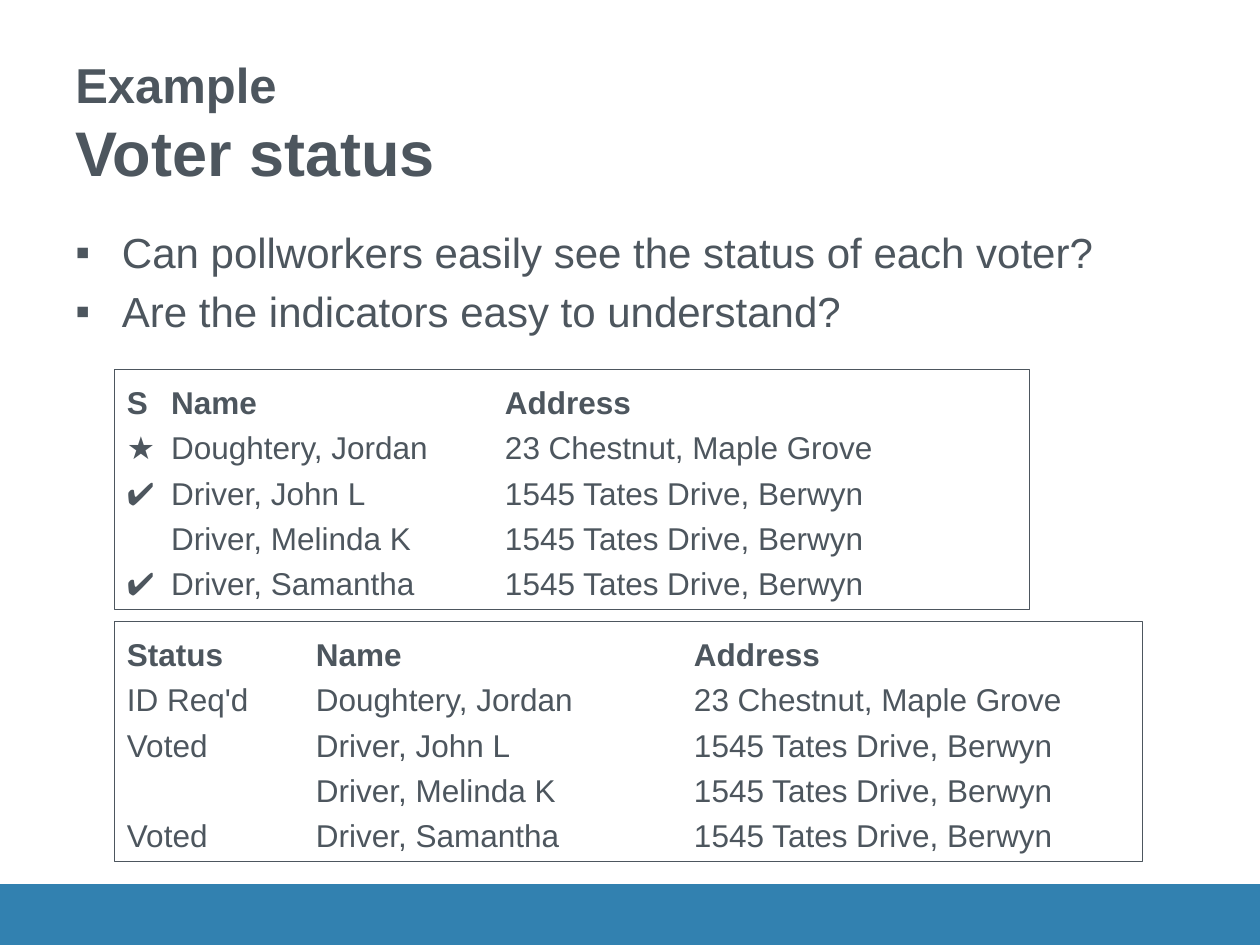
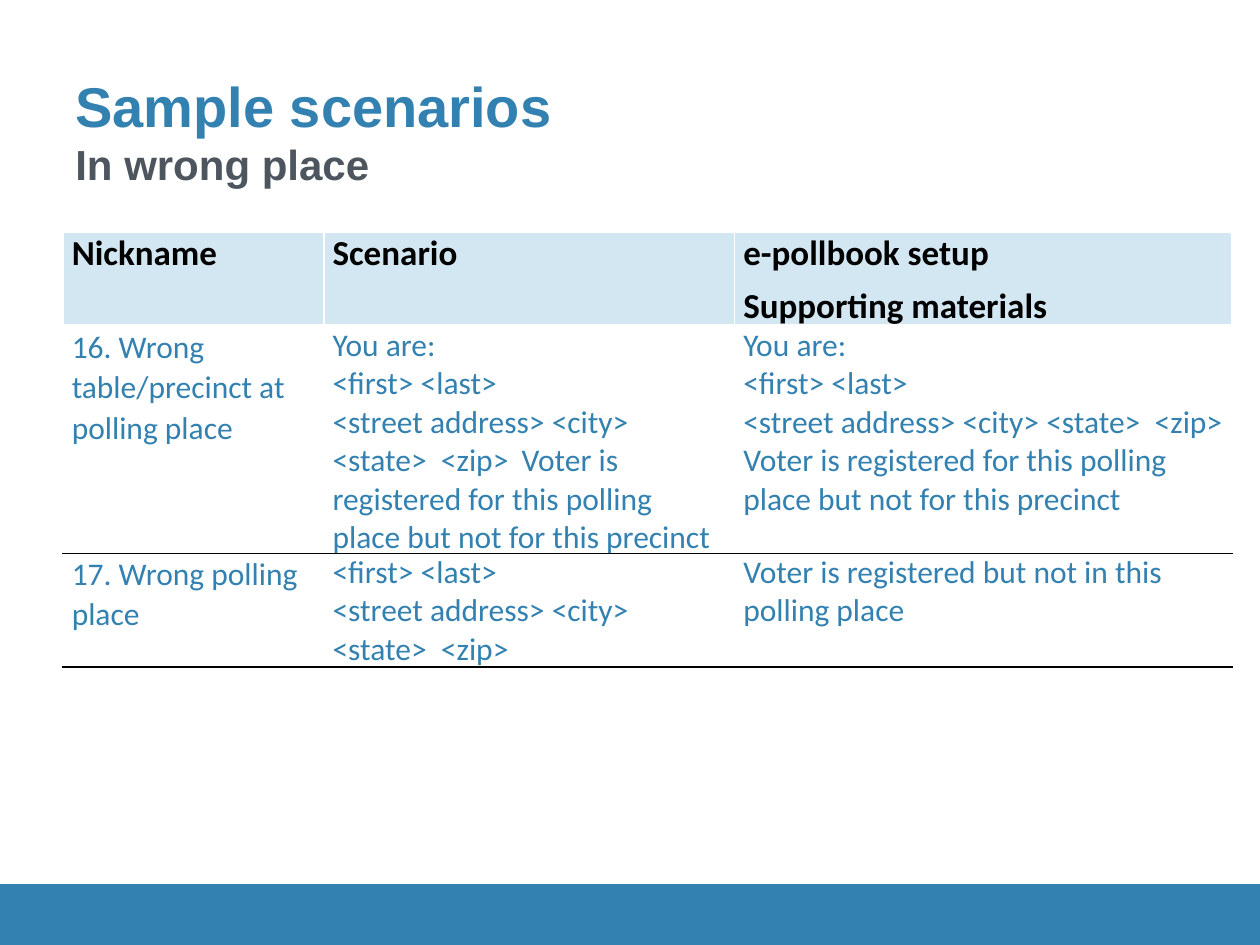
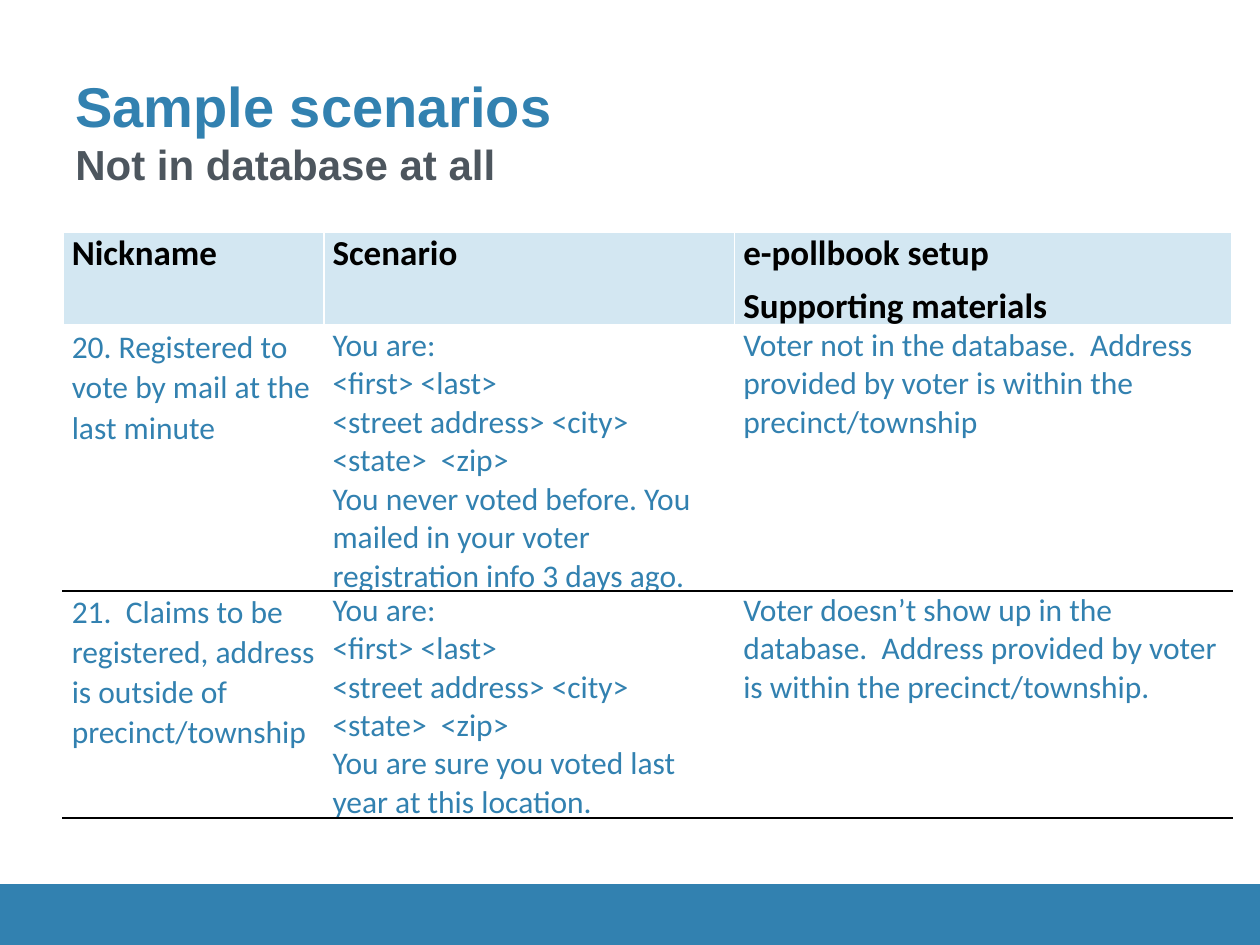
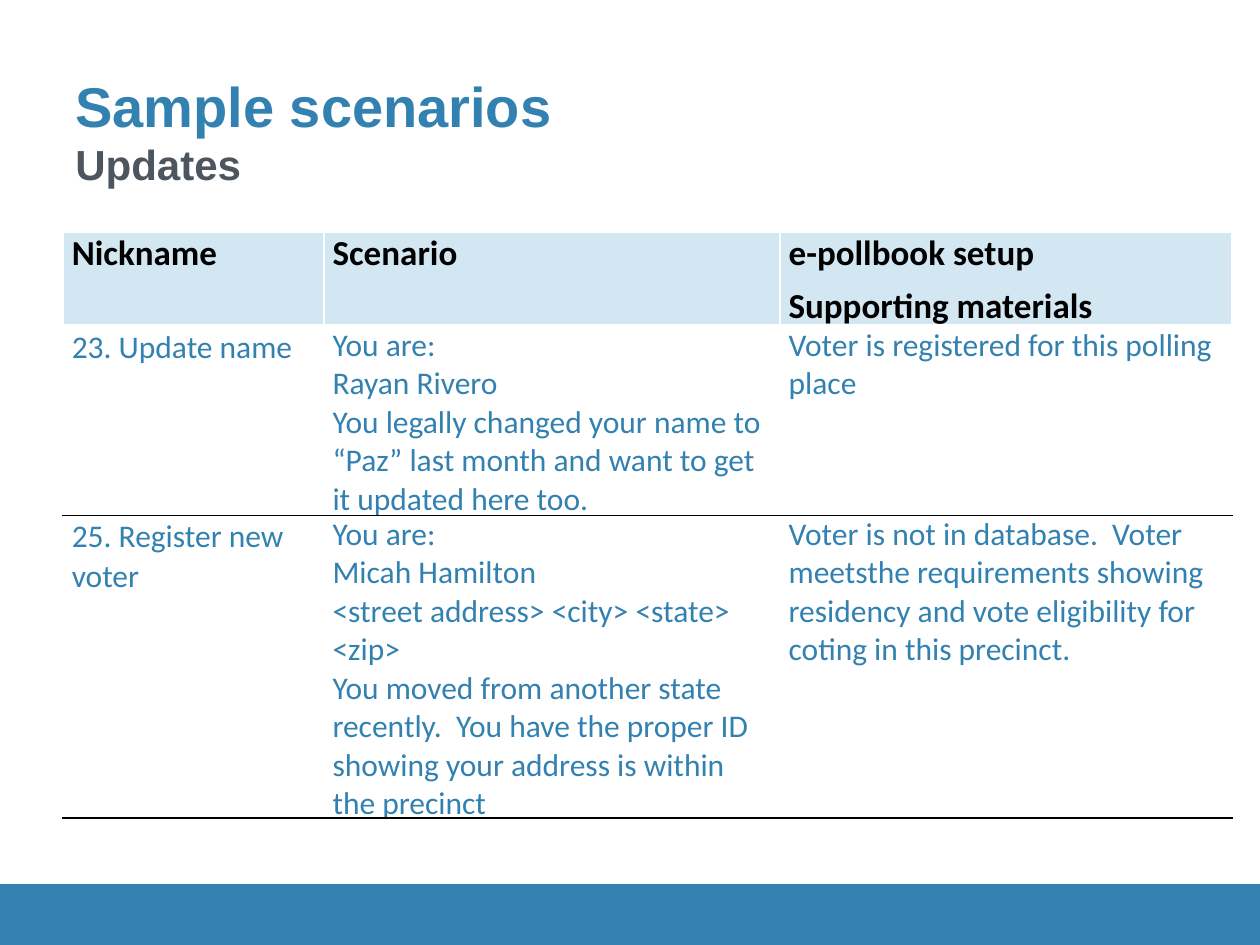
from lxml import etree
from pptx import Presentation
from pptx.dml import color
from pptx.enum import shapes, text
from pptx.oxml import ns
from pptx import util as u

WIDTH, HEIGHT = u.Inches(10), u.Inches(7.5)
COLUMN, ROW = WIDTH / 100, HEIGHT / 75

BLUE, SLATE, PALE = "3281B0", "4D565E", "D3E7F2"
WHITE, BLACK = "FFFFFF", "000000"

TITLE_AREA = (5, 3, 90, 12.5)
BAND_AREA = (0, 70.2, 100, 5)
BODY_AREA = (5, 17.5, 90, 8)
TABLE_LEFT, TABLE_TOP = 5, 18.4
ROW_HEIGHTS = (5.6, 7.6, 7.1)
WIDE_SETUP = (20.7, 32.6, 39.5)
WIDE_SCENARIO = (20.7, 36.2, 35.9)

HEADER_FONT = {"name": "Calibri", "size": u.Pt(20), "bold": True}
CELL_FONT = {"name": "Calibri", "size": u.Pt(18), "bold": False}
BODY_FONT = {"name": "Arial", "size": u.Pt(24), "bold": False}
LIST_FONT = {"name": "Arial", "size": u.Pt(18), "bold": False}
LIST_HEADER_FONT = {**LIST_FONT, "bold": True}

HEADER_SPACING = {"space_before": u.Pt(3), "space_after": u.Pt(3)}
NICKNAME_SPACING = {**HEADER_SPACING, "line_spacing": 1.05}
CELL_SPACING = {"space_before": u.Pt(0), "space_after": u.Pt(0)}
LIST_SPACING = {"line_spacing": 1.2, "alignment": text.PP_ALIGN.LEFT}
BODY_SPACING = {"space_before": u.Pt(4.8)}
CELL_FRAME = {
    "margin_left": u.Inches(0.07),
    "margin_right": u.Inches(0.07),
    "margin_top": 0,
    "margin_bottom": 0,
}

HEADERS = ["Nickname", "Scenario", "e-pollbook setup\nSupporting materials"]
PERSON = "<first> <last>\n<street address> <city> <state>  <zip>"
WRONG_PRECINCT = (
    f"You are:\n{PERSON}\tVoter is registered for this polling place "
    "but not for this precinct"
)

SCENARIOS = [
    ("In wrong place", WIDE_SETUP, 34.5, [
        ["16. Wrong table/precinct at polling place", WRONG_PRECINCT, WRONG_PRECINCT],
        ["17. Wrong polling place", PERSON,
         "Voter is registered but not in this polling place"],
    ]),
    ("Not in database at all", WIDE_SETUP, 46.5, [
        ["20. Registered to vote by mail at the last minute",
         f"You are:\n{PERSON}\nYou never voted before. You mailed in your voter "
         "registration info 3 days ago.",
         "Voter not in the database.  Address provided by voter is within the "
         "precinct/township"],
        ["21.  Claims to be registered, address is outside of precinct/township",
         f"You are:\n{PERSON}\nYou are sure you voted last year at this location.",
         "Voter doesn’t show up in the database.  Address provided by voter is "
         "within the precinct/township."],
    ]),
    ("Updates", WIDE_SCENARIO, 46.5, [
        ["23. Update name",
         "You are:\nRayan Rivero\nYou legally changed your name to “Paz” last "
         "month and want to get it updated here too.",
         "Voter is registered for this polling place"],
        ["25. Register new voter",
         "You are:\nMicah Hamilton\n<street address> <city> <state>  <zip>\n"
         "You moved from another state recently.  You have the proper ID showing "
         "your address is within the precinct",
         "Voter is not in database.  Voter meetsthe requirements showing residency "
         "and vote eligibility for coting in this precinct."],
    ]),
]

VOTERS = [
    ("Doughtery, Jordan", "23 Chestnut, Maple Grove"),
    ("Driver, John L", "1545 Tates Drive, Berwyn"),
    ("Driver, Melinda K", "1545 Tates Drive, Berwyn"),
    ("Driver, Samantha", "1545 Tates Drive, Berwyn"),
]
VOTER_LISTS = [
    ((9.1, 29.3, 72.6, 19.1), "S", ["★", "✔", "", "✔"], (0.35, 3)),
    ((9.1, 49.3, 81.6, 19.1), "Status", ["ID Req'd", "Voted", "", "Voted"], (1.5, 4.5)),
]


def rgb(value):
    return color.RGBColor.from_string(value)


def apply(target, values):
    for name, value in values.items():
        setattr(target, name, value)


def grid(left, top, width, height):
    return (round(left * COLUMN), round(top * ROW),
            round(width * COLUMN), round(height * ROW))


def add_run(paragraph, content, font, hue):
    run = paragraph.add_run()
    run.text = content
    apply(run.font, font)
    run.font.color.rgb = rgb(hue)


def add_paragraph(frame, index, content, font, hue, spacing):
    paragraph = frame.paragraphs[0] if index == 0 else frame.add_paragraph()
    apply(paragraph, spacing)
    add_run(paragraph, content, font, hue)
    return paragraph


def add_text_box(slide, area, anchor):
    frame = slide.shapes.add_textbox(*grid(*area)).text_frame
    apply(frame, {"word_wrap": True, "vertical_anchor": anchor})
    return frame


def add_rectangle(slide, area, line_hue, fill_hue=None):
    shape = slide.shapes.add_shape(shapes.MSO_SHAPE.RECTANGLE, *grid(*area))
    shape.shadow.inherit = False
    if fill_hue:
        shape.fill.solid()
        shape.fill.fore_color.rgb = rgb(fill_hue)
    else:
        shape.fill.background()
    shape.line.color.rgb = rgb(line_hue)
    shape.line.width = u.Pt(0.75)
    return shape


def add_title(slide, *lines):
    frame = add_text_box(slide, TITLE_AREA, text.MSO_ANCHOR.BOTTOM)
    paragraph = frame.paragraphs[0]
    for index, (content, size, hue) in enumerate(lines):
        if index:
            paragraph.add_line_break()
        add_run(paragraph, content,
                {"name": "Arial", "size": u.Pt(size), "bold": True}, hue)


def add_slide(presentation, *title_lines):
    slide = presentation.slides.add_slide(presentation.slide_layouts[6])
    add_rectangle(slide, BAND_AREA, BLUE, BLUE)
    add_title(slide, *title_lines)
    return slide


def add_bullets(slide, questions):
    frame = add_text_box(slide, BODY_AREA, text.MSO_ANCHOR.TOP)
    indent = u.Inches(0.37)
    for index, question in enumerate(questions):
        paragraph = add_paragraph(frame, index, question, BODY_FONT, SLATE, BODY_SPACING)
        properties = paragraph._p.get_or_add_pPr()
        properties.set("marL", str(indent))
        properties.set("indent", str(-indent))
        etree.SubElement(properties, ns.qn("a:buFont"), typeface="Arial")
        etree.SubElement(properties, ns.qn("a:buChar"), char="▪")


def set_tab_stops(paragraph, stops):
    tab_list = etree.SubElement(paragraph._p.get_or_add_pPr(), ns.qn("a:tabLst"))
    for stop in stops:
        etree.SubElement(tab_list, ns.qn("a:tab"), pos=str(u.Inches(stop)), algn="l")


def add_voter_list(slide, area, status_label, statuses, stops):
    frame = add_rectangle(slide, area, SLATE).text_frame
    apply(frame, {"word_wrap": True, "vertical_anchor": text.MSO_ANCHOR.TOP})
    rows = [(status_label, "Name", "Address")]
    rows += [(status, *voter) for status, voter in zip(statuses, VOTERS)]
    for index, row in enumerate(rows):
        font = LIST_FONT if index else LIST_HEADER_FONT
        paragraph = add_paragraph(frame, index, "\t".join(row), font, SLATE, LIST_SPACING)
        set_tab_stops(paragraph, stops)


def set_borders(cell, top, bottom, bottom_width):
    properties = cell._tc.get_or_add_tcPr()
    sides = [("lnL", WHITE, 1), ("lnR", WHITE, 1),
             ("lnT", top, 1), ("lnB", bottom, bottom_width)]
    for index, (side, hue, width) in enumerate(sides):
        line = etree.Element(ns.qn(f"a:{side}"), w=str(u.Pt(width)))
        fill = etree.SubElement(line, ns.qn("a:solidFill"))
        etree.SubElement(fill, ns.qn("a:srgbClr"), val=hue)
        properties.insert(index, line)


def fill_cell(cell, content, fill_hue, font, hue, spacing):
    apply(cell, CELL_FRAME)
    cell.fill.solid()
    cell.fill.fore_color.rgb = rgb(fill_hue)
    for index, line in enumerate(content.split("\n")):
        add_paragraph(cell.text_frame, index, line, font, hue, spacing)


def add_scenario_table(slide, widths, height, scenarios):
    rows = [HEADERS, *scenarios]
    area = grid(TABLE_LEFT, TABLE_TOP, sum(widths), height)
    graphic = slide.shapes.add_table(len(rows), len(widths), *area)
    table = graphic.table
    for column, width in zip(table.columns, widths):
        column.width = round(width * COLUMN)
    for row, row_height in zip(table.rows, ROW_HEIGHTS):
        row.height = round(row_height * ROW)
    graphic.height = area[3]
    for row_index, row in enumerate(rows):
        for column_index, content in enumerate(row):
            cell = table.cell(row_index, column_index)
            if row_index == 0:
                fill_cell(cell, content, PALE, HEADER_FONT, BLACK, HEADER_SPACING)
                set_borders(cell, WHITE, WHITE, 3)
            else:
                spacing = CELL_SPACING if column_index else NICKNAME_SPACING
                fill_cell(cell, content, WHITE, CELL_FONT, BLUE, spacing)
                set_borders(cell, WHITE if row_index == 1 else BLACK, BLACK, 1)


def main():
    presentation = Presentation()
    apply(presentation, {"slide_width": WIDTH, "slide_height": HEIGHT})

    slide = add_slide(presentation, ("Example", 28, SLATE), ("Voter status", 36, SLATE))
    add_bullets(slide, ["Can pollworkers easily see the status of each voter?",
                        "Are the indicators easy to understand?"])
    for voter_list in VOTER_LISTS:
        add_voter_list(slide, *voter_list)

    for subtitle, widths, height, scenarios in SCENARIOS:
        slide = add_slide(presentation, ("Sample scenarios", 32, BLUE),
                          (subtitle, 24, SLATE))
        add_scenario_table(slide, widths, height, scenarios)

    presentation.save("out.pptx")


if __name__ == "__main__":
    main()
